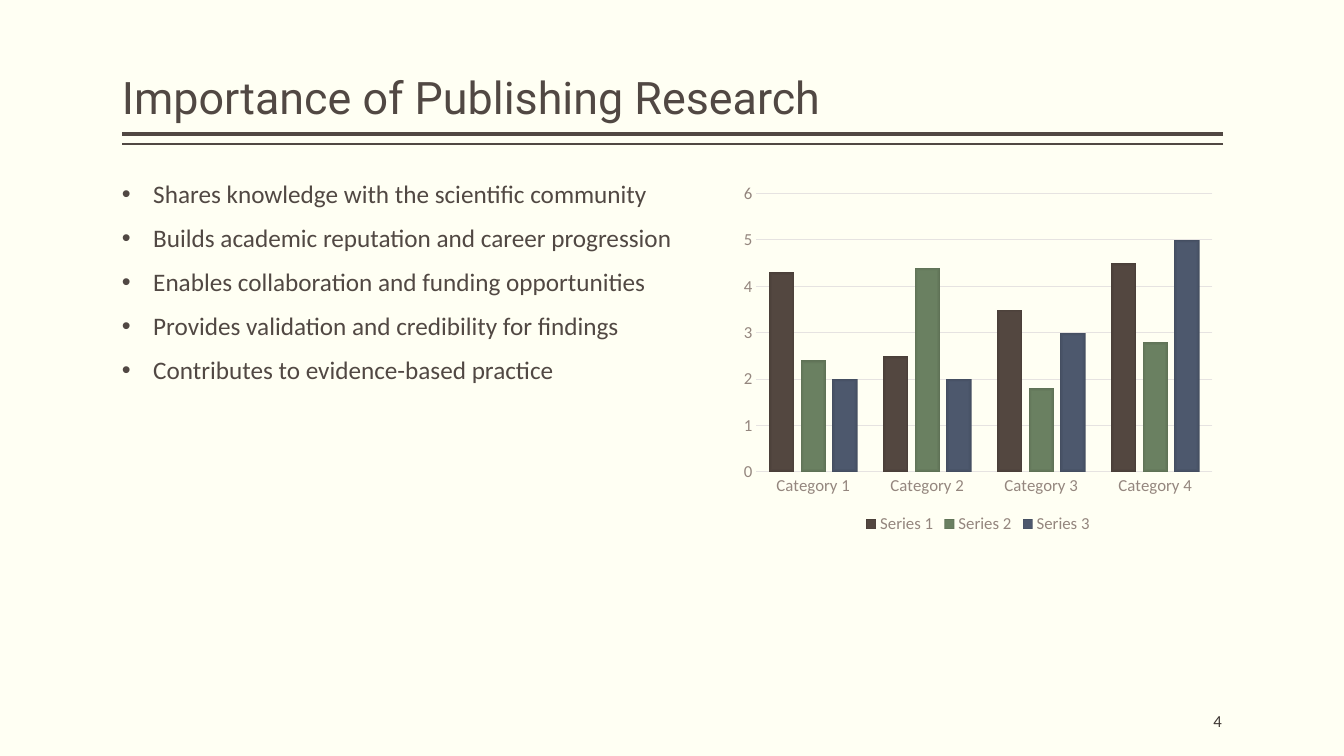
from dataclasses import dataclass

from lxml import etree
from pptx import Presentation
from pptx.chart.data import CategoryChartData
from pptx.dml.color import RGBColor
from pptx.enum.chart import XL_CHART_TYPE, XL_LEGEND_POSITION, XL_TICK_MARK
from pptx.enum.shapes import MSO_CONNECTOR
from pptx.enum.text import MSO_ANCHOR, MSO_AUTO_SIZE, PP_ALIGN
from pptx.oxml import parse_xml
from pptx.oxml.ns import nsdecls, qn
from pptx.util import Inches, Pt

COLORS = {
    "background": "FFFFF3",
    "text": "514843",
    "page_number": "3D3632",
    "chart_text": "94867E",
    "grid": "E6E3E1",
}
LEFT, RIGHT = 1.21, 12.13
BULLETS = [
    "Shares knowledge with the scientific community",
    "Builds academic reputation and career progression",
    "Enables collaboration and funding opportunities",
    "Provides validation and credibility for findings",
    "Contributes to evidence-based practice",
]
CATEGORIES = [f"Category {number}" for number in range(1, 5)]


@dataclass(frozen=True)
class Rule:
    top: float
    weight: float


@dataclass(frozen=True)
class Series:
    name: str
    values: tuple[float, ...]
    shades: tuple[str, str, str]


RULES = [Rule(1.33, 3), Rule(1.43, 1)]
SERIES = [
    Series("Series 1", (4.3, 2.5, 3.5, 4.5), ("544740", "534740", "4A3F39")),
    Series("Series 2", (2.4, 4.4, 1.8, 2.8), ("6B8162", "6A8061", "5F7256")),
    Series("Series 3", (2, 2, 3, 5), ("4E596E", "4D586D", "444E61")),
]


def rgb(name: str) -> RGBColor:
    return RGBColor.from_string(COLORS[name])


def style_font(font, size: float, color: str, face: str = "Calibri") -> None:
    font.name = face
    font.size = Pt(size)
    font.color.rgb = rgb(color)


def place(shape, left: float, top: float, width: float, height: float) -> None:
    shape.left, shape.top = Inches(left), Inches(top)
    shape.width, shape.height = Inches(width), Inches(height)


def prepare_frame(frame, anchor: MSO_ANCHOR) -> None:
    """Set wrapping, anchor and the margins shared by all text on the slide."""
    frame.word_wrap = True
    frame.auto_size = MSO_AUTO_SIZE.NONE
    frame.vertical_anchor = anchor
    frame.margin_left = frame.margin_right = 0
    frame.margin_top = frame.margin_bottom = Inches(0.05)


def add_rule(slide, rule: Rule) -> None:
    line = slide.shapes.add_connector(
        MSO_CONNECTOR.STRAIGHT,
        Inches(RIGHT), Inches(rule.top), Inches(LEFT), Inches(rule.top),
    )
    line.line.color.rgb = rgb("text")
    line.line.width = Pt(rule.weight)
    etree.SubElement(line._element.spPr, qn("a:effectLst"))


def fill_title(title) -> None:
    place(title, LEFT, 0.08, RIGHT - LEFT, 1.2)
    prepare_frame(title.text_frame, MSO_ANCHOR.BOTTOM)
    title.text_frame.text = "Importance of Publishing Research"
    heading = title.text_frame.paragraphs[0]
    heading.alignment = PP_ALIGN.LEFT
    heading.line_spacing = 0.9
    style_font(heading.runs[0].font, 32, "text", "Roboto")


def fill_bullets(body) -> None:
    place(body, LEFT, 1.75, 6.07, 5)
    prepare_frame(body.text_frame, MSO_ANCHOR.TOP)
    body.text_frame.text = "\n".join(BULLETS)
    for bullet in body.text_frame.paragraphs:
        bullet.alignment = PP_ALIGN.LEFT
        bullet.line_spacing = 0.9
        bullet.space_before = Pt(12)
        style_font(bullet.runs[0].font, 18, "text")
        properties = bullet._p.get_or_add_pPr()
        properties.set("marL", str(Inches(0.31)))
        properties.set("indent", str(-Inches(0.31)))
        etree.SubElement(properties, qn("a:buFont"), typeface="Arial")
        etree.SubElement(properties, qn("a:buChar"), char="•")


def shade_bars(bars, shades: tuple[str, str, str]) -> None:
    """Fill bars with a gradient that darkens from the centre to the edges."""
    bars.format.fill.solid()
    stops = "".join(
        f'<a:gs pos="{position}"><a:srgbClr val="{shade}"/></a:gs>'
        for position, shade in zip((0, 71000, 100000), shades)
    )
    gradient = parse_xml(
        f'<a:gradFill {nsdecls("a")} rotWithShape="1"><a:gsLst>{stops}</a:gsLst>'
        '<a:path path="rect"><a:fillToRect l="50000" t="50000" r="50000" b="50000"/>'
        "</a:path></a:gradFill>"
    )
    properties = bars._element.find(qn("c:spPr"))
    properties.replace(properties.find(qn("a:solidFill")), gradient)


def add_column_chart(slide) -> None:
    chart_data = CategoryChartData()
    chart_data.categories = CATEGORIES
    for series in SERIES:
        chart_data.add_series(series.name, series.values)
    chart = slide.shapes.add_chart(
        XL_CHART_TYPE.COLUMN_CLUSTERED,
        Inches(7.28), Inches(1.75), Inches(4.84), Inches(3.59), chart_data,
    ).chart
    style_font(chart.font, 10, "text")
    chart.has_title = False
    chart.has_legend = True
    chart.legend.position = XL_LEGEND_POSITION.BOTTOM
    chart.legend.include_in_layout = False
    style_font(chart.legend.font, 12, "chart_text")

    for axis in (chart.category_axis, chart.value_axis):
        axis.major_tick_mark = axis.minor_tick_mark = XL_TICK_MARK.NONE
        style_font(axis.tick_labels.font, 12, "chart_text")
    chart.category_axis.format.line.color.rgb = rgb("grid")
    chart.category_axis.format.line.width = Pt(1)
    values = chart.value_axis
    values.minimum_scale, values.maximum_scale, values.major_unit = 0, 6, 1
    values.format.line.fill.background()
    values.major_gridlines.format.line.color.rgb = rgb("grid")
    values.major_gridlines.format.line.width = Pt(0.75)

    plot = chart.plots[0]
    plot.vary_by_categories = False
    plot.gap_width, plot.overlap = 100, -24
    for bars, series in zip(plot.series, SERIES):
        bars.invert_if_negative = False
        shade_bars(bars, series.shades)


def add_page_number(slide) -> None:
    box = slide.shapes.add_textbox(Inches(10.12), Inches(6.95), Inches(2), Inches(0.4))
    prepare_frame(box.text_frame, MSO_ANCHOR.MIDDLE)
    box.text_frame.text = "4"
    number = box.text_frame.paragraphs[0]
    number.alignment = PP_ALIGN.RIGHT
    style_font(number.runs[0].font, 12, "page_number")


def main() -> None:
    presentation = Presentation()
    presentation.slide_width, presentation.slide_height = Inches(13.33), Inches(7.5)
    slide = presentation.slides.add_slide(presentation.slide_layouts[1])
    slide.background.fill.solid()
    slide.background.fill.fore_color.rgb = rgb("background")
    for rule in RULES:
        add_rule(slide, rule)
    fill_title(slide.shapes.title)
    fill_bullets(slide.placeholders[1])
    add_column_chart(slide)
    add_page_number(slide)
    presentation.save("out.pptx")


if __name__ == "__main__":
    main()
